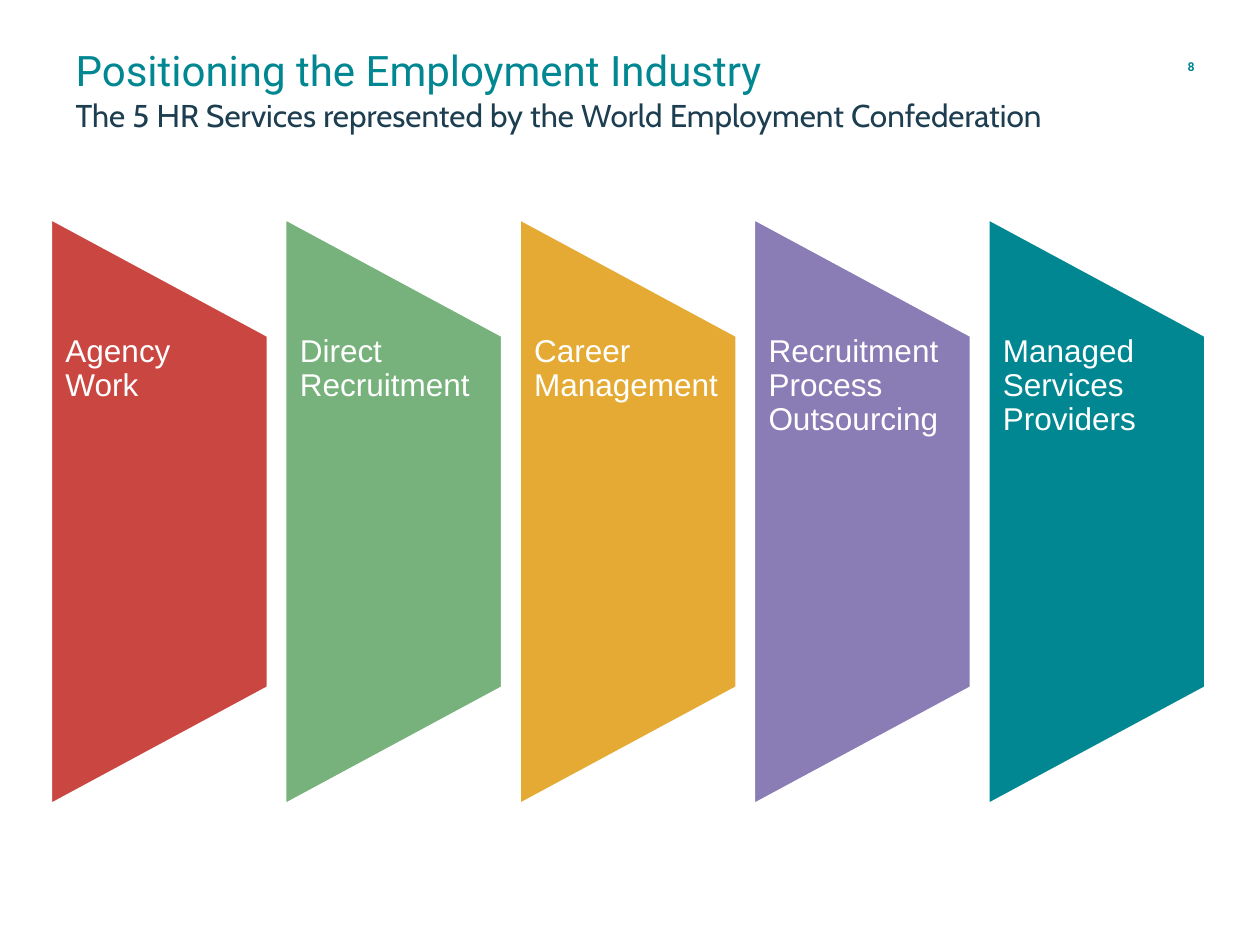
from pptx import Presentation
from pptx.dml.color import RGBColor
from pptx.enum.shapes import MSO_SHAPE
from pptx.enum.text import MSO_ANCHOR, MSO_AUTO_SIZE, PP_ALIGN
from pptx.oxml.ns import qn
from pptx.util import Inches, Pt

COLORS = {
    "teal": "008792",
    "navy": "1D3E50",
    "white": "FFFFFF",
    "red": "CA4641",
    "green": "77B27C",
    "amber": "E5AA34",
    "purple": "8A7CB5",
}

SERVICES = [
    ("Agency Work", "red"),
    ("Direct Recruitment", "green"),
    ("Career Management", "amber"),
    ("Recruitment Process Outsourcing", "purple"),
    ("Managed Services Providers", "teal"),
]

PANEL_LEFT, PANEL_TOP = 0.4, 1.73
PANEL_WIDTH, PANEL_HEIGHT = 1.73, 4.66
PANEL_PITCH = 1.86
LABEL_TOP, LABEL_HEIGHT = 2.66, 2.8


def rgb(name):
    return RGBColor.from_string(COLORS[name])


def place(shape, left, top, width, height):
    shape.left, shape.top = Inches(left), Inches(top)
    shape.width, shape.height = Inches(width), Inches(height)


def write(shape, text, font_name, size, color, align=PP_ALIGN.LEFT,
          anchor=MSO_ANCHOR.TOP, bold=False):
    """Fill a shape with one formatted paragraph and return the paragraph."""
    frame = shape.text_frame
    frame.text = text
    frame.word_wrap = True
    frame.auto_size = MSO_AUTO_SIZE.NONE
    frame.vertical_anchor = anchor
    paragraph = frame.paragraphs[0]
    paragraph.alignment = align
    paragraph.space_before = Pt(0)
    font = paragraph.font
    font.name, font.size, font.bold = font_name, Pt(size), bold
    font.color.rgb = rgb(color)
    return paragraph


def remove_bullet(paragraph):
    properties = paragraph._p.get_or_add_pPr()
    properties.set("marL", "0")
    properties.set("indent", "0")
    bullet_none = properties.makeelement(qn("a:buNone"), {})
    default_run = properties.find(qn("a:defRPr"))
    default_run.addprevious(bullet_none)


def add_heading(slide):
    title, subtitle = slide.placeholders
    place(title, 0.5, 0.3, 7.49, 0.5)
    write(title, "Positioning the Employment Industry", "Roboto", 24, "teal")
    place(subtitle, 0.5, 0.71, 9.07, 0.71)
    remove_bullet(write(
        subtitle,
        "The 5 HR Services represented by the World Employment Confederation",
        "Cabin", 18, "navy"))


def add_page_number(slide, number):
    box = slide.shapes.add_textbox(
        Inches(9.19), Inches(0.33), Inches(0.39), Inches(0.4))
    write(box, str(number), "Roboto", 7, "teal", PP_ALIGN.RIGHT,
          MSO_ANCHOR.MIDDLE, bold=True)


def add_service(shapes, left, name, color):
    """Add a panel, turned a quarter to the left, with its upright label."""
    turn_offset = (PANEL_HEIGHT - PANEL_WIDTH) / 2
    panel = shapes.add_shape(
        MSO_SHAPE.FLOWCHART_MANUAL_OPERATION,
        Inches(left - turn_offset), Inches(PANEL_TOP + turn_offset),
        Inches(PANEL_HEIGHT), Inches(PANEL_WIDTH))
    panel.rotation = 270
    panel.shadow.inherit = False
    panel.fill.solid()
    panel.fill.fore_color.rgb = rgb(color)
    panel.line.color.rgb = rgb("white")
    panel.line.width = Pt(2)

    label = shapes.add_textbox(
        Inches(left), Inches(LABEL_TOP),
        Inches(PANEL_WIDTH), Inches(LABEL_HEIGHT))
    frame = label.text_frame
    frame.margin_left, frame.margin_right = Inches(0.12), Inches(0.13)
    frame.margin_top = frame.margin_bottom = 0
    write(label, name, "Arial", 18, "white").line_spacing = 0.9


def main():
    prs = Presentation()
    prs.slide_width, prs.slide_height = Inches(10), Inches(7.5)
    slide = prs.slides.add_slide(prs.slide_layouts[1])
    add_heading(slide)
    add_page_number(slide, 8)
    services = slide.shapes.add_group_shape()
    for index, (name, color) in enumerate(SERVICES):
        add_service(services.shapes, PANEL_LEFT + index * PANEL_PITCH,
                    name, color)
    prs.save("out.pptx")


if __name__ == "__main__":
    main()
